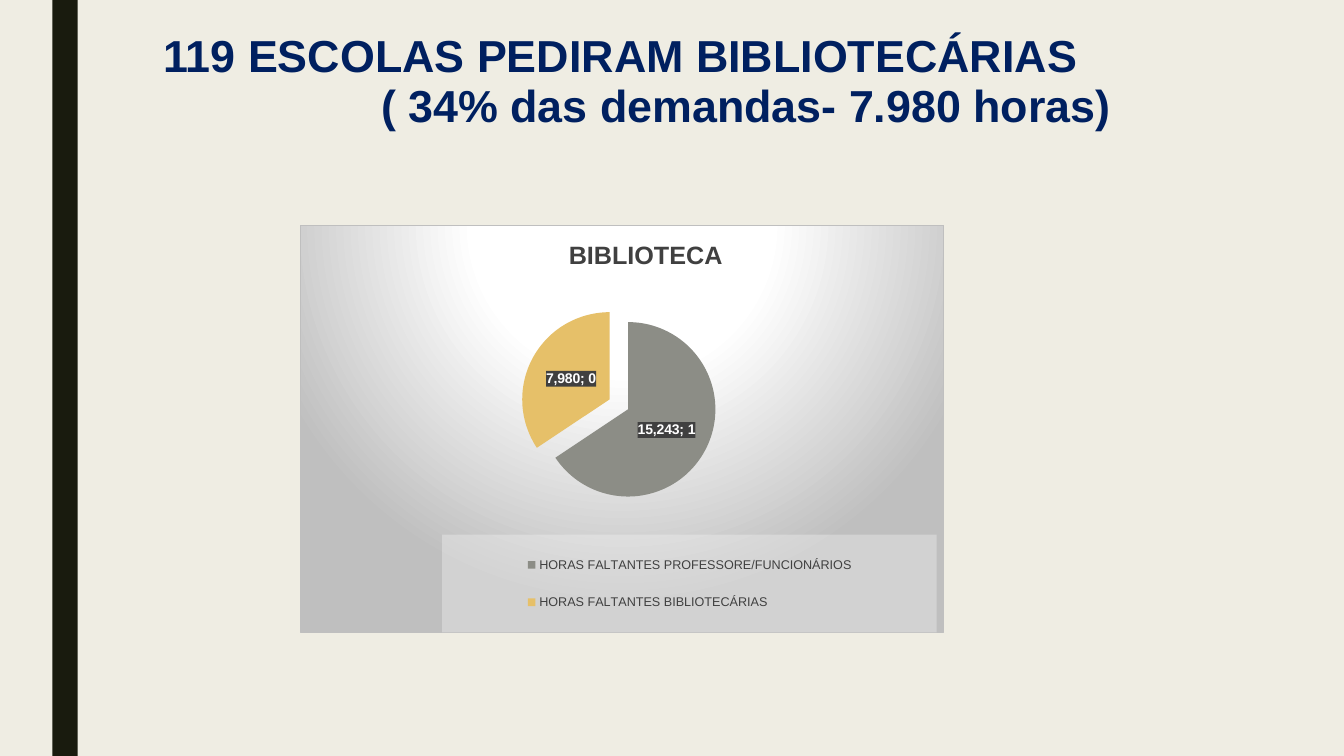
from lxml.etree import SubElement
from pptx import Presentation
from pptx.chart.data import CategoryChartData
from pptx.dml.color import RGBColor
from pptx.enum.chart import XL_CHART_TYPE, XL_LABEL_POSITION, XL_LEGEND_POSITION
from pptx.enum.shapes import MSO_SHAPE
from pptx.enum.text import MSO_ANCHOR, PP_ALIGN
from pptx.oxml import parse_xml
from pptx.oxml.ns import nsdecls, qn
from pptx.util import Inches, Pt

# Each title line with its left indent in inches
TITLE_LINES = [
    ("119 ESCOLAS PEDIRAM BIBLIOTECÁRIAS", 0.02),
    ("( 34% das demandas- 7.980 horas)", 2.18),
]
CHART_TITLE = "BIBLIOTECA"
# Category, missing hours, slice colour
SLICES = [
    ("HORAS FALTANTES PROFESSORE/FUNCIONÁRIOS", 15243, RGBColor(0x8C, 0x8D, 0x86)),
    ("HORAS FALTANTES BIBLIOTECÁRIAS", 7980, RGBColor(0xE6, 0xC0, 0x69)),
]
EXPLOSION = 12

FONT = "Arial"
CREAM = RGBColor(0xEF, 0xED, 0xE3)
BAR = RGBColor(0x19, 0x1B, 0x0E)
NAVY = RGBColor(0x00, 0x20, 0x60)
DARK = RGBColor(0x40, 0x40, 0x40)
SILVER = RGBColor(0xBF, 0xBF, 0xBF)
PALE = RGBColor(0xF2, 0xF2, 0xF2)
WHITE = RGBColor(0xFF, 0xFF, 0xFF)

# Left, top, width, height in inches
SLIDE_SIZE = (13.33, 7.5)
BAR_BOX = (0.52, 0, 0.25, SLIDE_SIZE[1])
TITLE_BOX = (1.5, 0.27, 10.5, 1.39)
CHART_BOX = (2.98, 2.23, 6.38, 4.05)
# Shares of the chart's size
PLOT_SHARE = (0.09, 0.2, 0.81, 0.48)
LEGEND_SHARE = (0.22, 0.76, 0.77, 0.24)
CHART_TITLE_SHARE = (0.41, 0.02)


def inches(box):
    return [Inches(length) for length in box]


def style(font, size, color, bold=False):
    font.name, font.size, font.bold = FONT, Pt(size), bold
    font.color.rgb = color


def set_layout(parent, share, before, inner=False):
    """Place a chart part by shares of the chart, ahead of the first tag in before."""
    for old in parent.findall(qn("c:layout")):
        parent.remove(old)
    layout = parse_xml(f"<c:layout {nsdecls('c')}/>")
    manual = SubElement(layout, qn("c:manualLayout"))
    if inner:
        SubElement(manual, qn("c:layoutTarget"), val="inner")
    for tag in ("xMode", "yMode"):
        SubElement(manual, qn(f"c:{tag}"), val="edge")
    for tag, value in zip("xywh", share):
        SubElement(manual, qn(f"c:{tag}"), val=str(value))
    next(child for child in parent if child.tag in map(qn, before)).addprevious(layout)


def translucent(color, opacity):
    return parse_xml(
        f'<c:spPr {nsdecls("c", "a")}><a:solidFill><a:srgbClr val="{color}">'
        f'<a:alpha val="{opacity * 1000}"/></a:srgbClr></a:solidFill></c:spPr>')


def chart_background():
    stops = "".join(
        f'<a:gs pos="{position * 1000}"><a:srgbClr val="{color}"/></a:gs>'
        for position, color in ((0, WHITE), (39, WHITE), (100, SILVER)))
    return parse_xml(
        f'<c:spPr {nsdecls("c", "a")}><a:gradFill><a:gsLst>{stops}</a:gsLst>'
        '<a:path path="circle"><a:fillToRect l="50000" t="-80000" r="50000" b="180000"/>'
        f'</a:path></a:gradFill><a:ln w="{Pt(0.75)}"><a:solidFill>'
        f'<a:srgbClr val="{SILVER}"/></a:solidFill></a:ln></c:spPr>')


def add_title(slide):
    title = slide.shapes.title
    title.left, title.top, title.width, title.height = inches(TITLE_BOX)
    frame = title.text_frame
    frame.vertical_anchor = MSO_ANCHOR.TOP
    frame.text = "\n".join(line for line, _ in TITLE_LINES)
    for paragraph, (_, indent) in zip(frame.paragraphs, TITLE_LINES):
        paragraph.alignment = PP_ALIGN.LEFT
        paragraph.line_spacing = 0.93
        paragraph._p.get_or_add_pPr().set("marL", str(Inches(indent)))
        style(paragraph.runs[0].font, 32, NAVY, bold=True)


def add_pie(slide):
    data = CategoryChartData(number_format="#,##0")
    data.categories = [name for name, _, _ in SLICES]
    data.add_series(CHART_TITLE, [hours for _, hours, _ in SLICES])
    chart = slide.shapes.add_chart(XL_CHART_TYPE.PIE, *inches(CHART_BOX), data).chart
    style(chart.font, 10, DARK)
    chart._chartSpace.chart.addnext(chart_background())

    chart.has_title = True
    chart.chart_title.text_frame.text = CHART_TITLE
    style(chart.chart_title.text_frame.paragraphs[0].runs[0].font, 18, DARK, bold=True)
    chart.chart_title.include_in_layout = False
    set_layout(chart.chart_title._element, CHART_TITLE_SHARE, ["c:overlay"])

    chart.has_legend = True
    legend = chart.legend
    legend.position = XL_LEGEND_POSITION.RIGHT
    legend.include_in_layout = False
    style(legend.font, 9, DARK)
    set_layout(legend._element, LEGEND_SHARE, ["c:overlay"])
    legend._element.find(qn("c:txPr")).addprevious(translucent(PALE, 39))

    plot = chart.plots[0]
    set_layout(plot._element.getparent(), PLOT_SHARE, ["c:pieChart"], inner=True)
    plot.vary_by_categories = True
    series = plot.series[0]
    for index, (_, _, color) in enumerate(SLICES):
        fill = series.points[index].format.fill
        fill.solid()
        fill.fore_color.rgb = color
    first_point = series._element.find(qn("c:dPt"))
    first_point.addprevious(parse_xml(f'<c:explosion {nsdecls("c")} val="{EXPLOSION}"/>'))

    labels = series.data_labels
    labels.show_value = labels.show_percentage = True
    labels.show_category_name = labels.show_series_name = labels.show_legend_key = False
    labels.position = XL_LABEL_POSITION.CENTER
    labels.number_format, labels.number_format_is_linked = "#,##0", False
    style(labels.font, 10, WHITE, bold=True)
    labels._element.find(qn("c:txPr")).addprevious(translucent(DARK, 90))
    separator = parse_xml(f'<c:separator {nsdecls("c")}>; </c:separator>')
    labels._element.find(qn("c:showBubbleSize")).addnext(separator)


def main():
    presentation = Presentation()
    presentation.slide_width, presentation.slide_height = inches(SLIDE_SIZE)
    slide = presentation.slides.add_slide(presentation.slide_layouts[5])
    slide.background.fill.solid()
    slide.background.fill.fore_color.rgb = CREAM
    bar = slide.shapes.add_shape(MSO_SHAPE.RECTANGLE, *inches(BAR_BOX))
    bar.shadow.inherit = False
    bar.fill.solid()
    bar.fill.fore_color.rgb = BAR
    bar.line.fill.background()
    add_title(slide)
    add_pie(slide)
    presentation.save("out.pptx")


if __name__ == "__main__":
    main()
